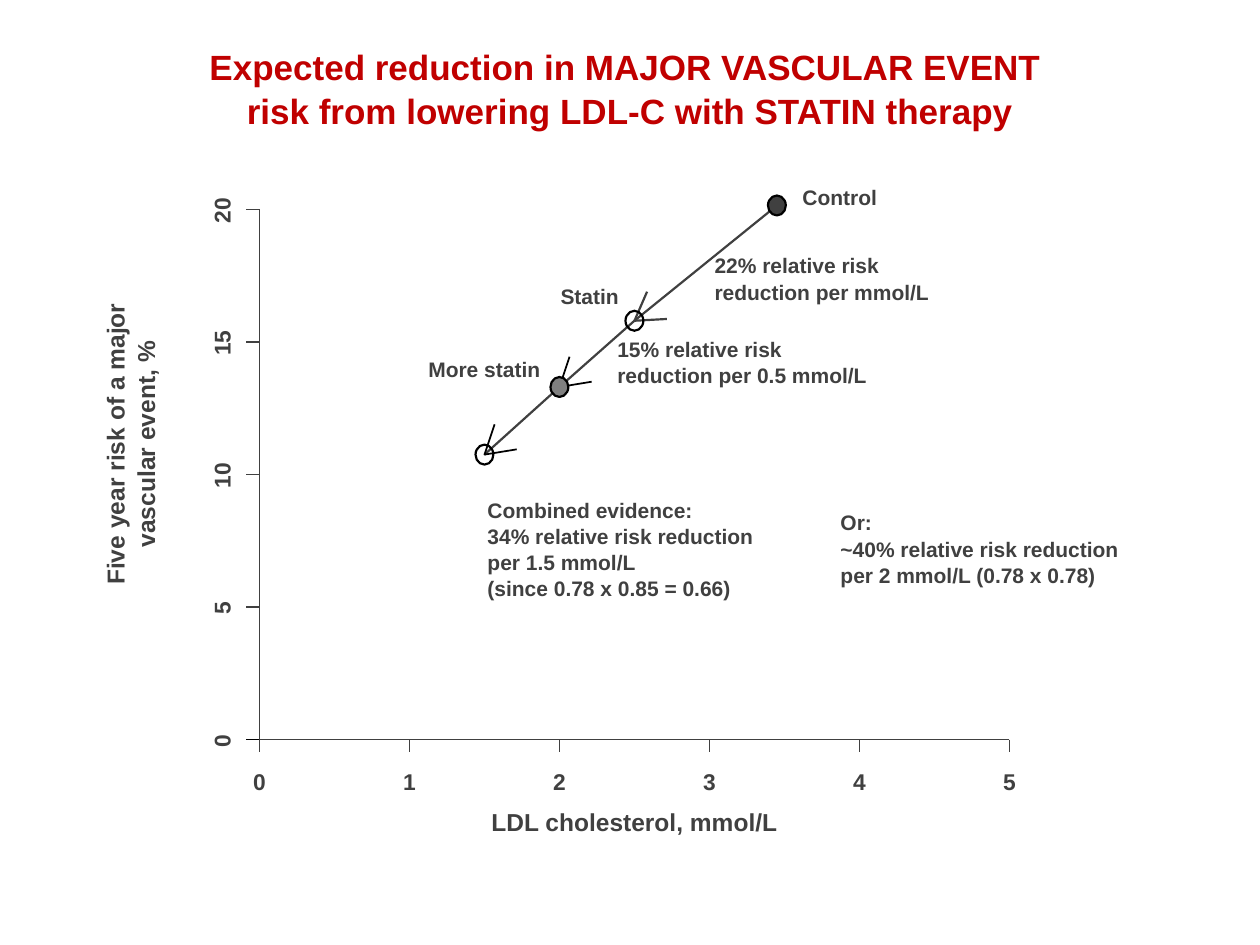
import pptx
import pptx.util
import pptx.dml.color
import pptx.enum.shapes
import pptx.enum.text
import pptx.oxml.ns
import lxml.etree
from dataclasses import dataclass

Pt = pptx.util.Pt
RGB = pptx.dml.color.RGBColor.from_string
ALIGN = pptx.enum.text.PP_ALIGN
SHAPES = pptx.enum.shapes


@dataclass(frozen=True)
class Theme:
    font: str = "Arial"
    red: str = "C00000"
    ink: str = "404040"
    gray: str = "808080"
    black: str = "000000"
    head: int = 20
    axis: int = 14
    tick: int = 13
    note: int = 12
    thin: float = 1
    thick: float = 1.25
    lead: float = 1.04


T = Theme()


def write(frame, lines, size, color=T.ink, align=ALIGN.LEFT):
    """Fill a text frame with one bold paragraph per line."""
    for i, line in enumerate(lines):
        para = frame.paragraphs[0] if i == 0 else frame.add_paragraph()
        para.alignment = align
        para.line_spacing = T.lead
        run = para.add_run()
        run.text = line
        run.font.name = T.font
        run.font.size = Pt(size)
        run.font.bold = True
        run.font.color.rgb = RGB(color)


def label(slide, box, *lines, size=T.note, turn=0, align=ALIGN.LEFT):
    shape = slide.shapes.add_textbox(*map(Pt, box))
    shape.rotation = turn
    frame = shape.text_frame
    frame.margin_left = frame.margin_right = 0
    frame.margin_top = frame.margin_bottom = 0
    frame.word_wrap = False
    frame.auto_size = pptx.enum.text.MSO_AUTO_SIZE.SHAPE_TO_FIT_TEXT
    write(frame, lines, size, align=align)


def stroke(shape, width, color=T.ink):
    shape.line.color.rgb = RGB(color)
    shape.line.width = Pt(width)


def rule(slide, start, end, width=T.thin, color=T.ink):
    line = slide.shapes.add_connector(
        SHAPES.MSO_CONNECTOR.STRAIGHT, *map(Pt, (*start, *end)))
    stroke(line, width, color)
    props = line._element.spPr
    lxml.etree.SubElement(props, pptx.oxml.ns.qn("a:effectLst"))


def barb(slide, tip, wings, width, color):
    """Draw an open arrowhead with its two wings given from the tip."""
    first, last = [(tip[0] + dx, tip[1] + dy) for dx, dy in wings]
    pen = slide.shapes.build_freeform(*map(Pt, first), scale=1)
    pen.add_line_segments([tuple(map(Pt, p)) for p in (tip, last)], close=False)
    shape = pen.convert_to_shape()
    shape.shadow.inherit = False
    shape.fill.background()
    stroke(shape, width, color)


def dot(slide, mid, fill):
    wide, high = 10.2, 11.4
    box = (mid[0] - wide / 2, mid[1] - high / 2, wide, high)
    shape = slide.shapes.add_shape(SHAPES.MSO_SHAPE.OVAL, *map(Pt, box))
    shape.shadow.inherit = False
    if fill:
        shape.fill.solid()
        shape.fill.fore_color.rgb = RGB(fill)
    else:
        shape.fill.background()
    stroke(shape, T.thick, T.black)


def title(slide, box):
    shape = slide.shapes.title
    shape.left, shape.top, shape.width, shape.height = map(Pt, box)
    frame = shape.text_frame
    frame.word_wrap = True
    frame.vertical_anchor = pptx.enum.text.MSO_ANCHOR.TOP
    write(frame, ("Expected reduction in MAJOR VASCULAR EVENT ",
                  "risk from lowering LDL-C with STATIN therapy"),
          T.head, T.red, ALIGN.CENTER)


def axes(slide, box):
    left, top, wide, high = box
    base = top + high
    rule(slide, (left, base), (left + wide, base))
    rule(slide, (left, base), (left, top))
    for i in range(6):
        x = left + wide * i / 5
        rule(slide, (x, base), (x, base + 7.2))
        label(slide, (x - 3.6, base + 15.2, 7.2, 15.8), str(i), size=T.tick)
    for i in range(5):
        y = base - high * i / 4
        name = str(5 * i)
        span = 7.2 * len(name)
        rule(slide, (left, y), (left - 7.9, y), color=T.ink if i else T.black)
        label(slide, (left - 22.3 - span / 2, y - 7.2, span, 15.8),
              name, size=T.tick, turn=270)
    label(slide, (left + 132.5, base + 38.2, 164.2, 17.3),
          "LDL cholesterol, mmol/L", size=T.axis)
    label(slide, (left - 155.5, top + 117.2, 161.3, 33.8),
          "Five year risk of a major", "vascular event, %",
          size=T.axis, turn=270, align=ALIGN.CENTER)


def trend(slide, box):
    """Plot risk against cholesterol, with an arrow for each step down."""
    left, top, wide, high = box
    data = [(3.45, 20.15), (2.5, 15.8), (2, 13.3), (1.5, 10.75)]
    fills = (T.ink, None, T.gray, None)
    spots = [(left + wide * x / 5, top + high * (1 - y / 20)) for x, y in data]
    steep = ((5.8, -17.3), (18.4, -3))
    heads = [(((7.2, -16.6), (18.5, -1)), T.thick, T.ink),
             (steep, T.thin, T.black), (steep, T.thin, T.black)]
    for start, end, head in zip(spots, spots[1:], heads):
        rule(slide, start, end, T.thick)
        barb(slide, end, *head)
    for spot, fill in zip(spots, fills):
        dot(slide, spot, fill)


def notes(slide, box):
    left, top = box[:2]
    items = [
        (310.3, -14.6, 43.2, "Control"),
        (260, 24.3, 123.8, "22% relative risk", "reduction per mmol/L"),
        (172, 41.6, 37.4, "Statin"),
        (204.5, 71.8, 144, "15% relative risk", "reduction per 0.5 mmol/L"),
        (96.5, 83.3, 64.8, "More statin"),
        (130.3, 164, 153.4, "Combined evidence:", "34% relative risk reduction",
         "per 1.5 mmol/L", "(since 0.78 x 0.85 = 0.66)"),
        (332, 171.2, 160.6, "Or:", "~40% relative risk reduction",
         "per 2 mmol/L (0.78 x 0.78)"),
    ]
    for dx, dy, wide, *lines in items:
        label(slide, (left + dx, top + dy, wide, 14.4 * len(lines)), *lines)


def main():
    deck = pptx.Presentation()
    deck.slide_width, deck.slide_height = Pt(720), Pt(540)
    slide = deck.slides.add_slide(deck.slide_layouts[5])
    plot = (148.3, 119.7, 428.5, 302.9)
    title(slide, (0, 21.6, 720, 90))
    axes(slide, plot)
    trend(slide, plot)
    notes(slide, plot)
    deck.save("out.pptx")


if __name__ == "__main__":
    main()
